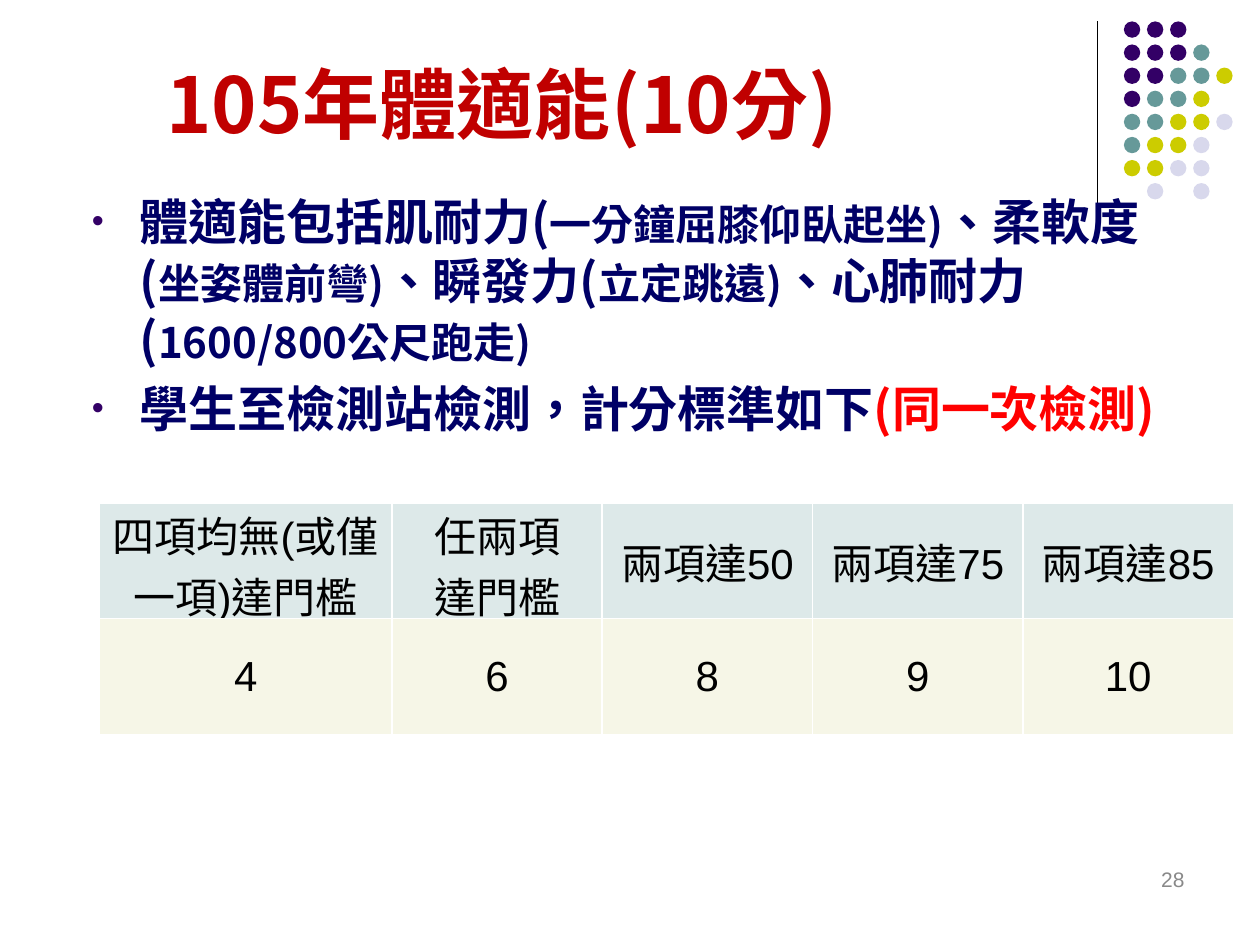
from lxml import etree
from pptx import Presentation
from pptx.dml.color import RGBColor
from pptx.enum.shapes import MSO_CONNECTOR, MSO_SHAPE
from pptx.enum.text import MSO_ANCHOR, PP_ALIGN
from pptx.oxml.ns import qn
from pptx.util import Inches, Pt

STRAIGHT = MSO_CONNECTOR.STRAIGHT
OVAL = MSO_SHAPE.OVAL
TOP, MIDDLE, BOTTOM = MSO_ANCHOR.TOP, MSO_ANCHOR.MIDDLE, MSO_ANCHOR.BOTTOM
LEFT, CENTER, RIGHT = PP_ALIGN.LEFT, PP_ALIGN.CENTER, PP_ALIGN.RIGHT
TITLE_ONLY = 5

PURPLE, NAVY, RED = "330066", "000066", "FF0000"
DOT_COLORS = {"P": PURPLE, "T": "669999", "Y": "CCCC00", "L": "D8D8EC"}
DOT_ROWS = ["PPP", "PPPT", "PPTTY", "PTTY", "TTYYL", "TYYL", "YYLL", " L L"]
DOT_PITCH = 0.55 / 3

CRITERIA = [
    [("體適能包括肌耐力(", 28, NAVY), ("一分鐘屈膝仰臥起坐)", 24, NAVY),
     ("、柔軟度(", 28, NAVY), ("坐姿體前彎)", 24, NAVY),
     ("、瞬發力(", 28, NAVY), ("立定跳遠)", 24, NAVY),
     ("、心肺耐力(", 28, NAVY), ("1600/800公尺跑走)", 24, NAVY)],
    [("學生至檢測站檢測，計分標準如下", 28, NAVY), ("(同一次檢測)", 28, RED)],
]
SCORES = [
    ["四項均無(或僅一項)達門檻", "任兩項\n達門檻", "兩項達50", "兩項達75", "兩項達85"],
    ["4", "6", "8", "9", "10"],
]
ROW_FILLS = ["DDE9E9", "F6F6E7"]


def color(hex_code):
    return RGBColor.from_string(hex_code)


class SlideWriter:
    """Holds the text style and the slide being filled."""
    title_font = "Noto Sans CJK JP"
    body_font = "Noto Sans CJK SC"
    plain_font = "Arial"
    language = "zh-TW"

    def __init__(self, slide):
        self.slide = slide
        self.shapes = slide.shapes

    def set_font(self, para, name, size, hex_code, bold=False, asian_name=None):
        """Set the paragraph font, for East Asian text too."""
        font = para.font
        font.name, font.size, font.bold = name, Pt(size), bold
        font.color.rgb = color(hex_code)
        properties = para._p.pPr.find(qn("a:defRPr"))
        properties.set("lang", self.language)
        etree.SubElement(properties, qn("a:ea"), typeface=asian_name or name)

    def title(self, text, left, top, width, height):
        box = self.shapes.title
        box.left, box.top = Inches(left), Inches(top)
        box.width, box.height = Inches(width), Inches(height)
        box.text_frame.text = text
        box.text_frame.vertical_anchor = BOTTOM
        para = box.text_frame.paragraphs[0]
        para.alignment = LEFT
        self.set_font(para, self.title_font, 44, "C00000", True)

    def text_frame(self, left, top, width, height):
        box = self.shapes.add_textbox(Inches(left), Inches(top), Inches(width), Inches(height))
        box.text_frame.word_wrap = True
        box.text_frame.vertical_anchor = TOP
        return box.text_frame

    def bullet(self, para):
        properties = para._p.get_or_add_pPr()
        properties.set("marL", str(Inches(0.38)))
        properties.set("indent", str(-Inches(0.38)))
        bullet_color = etree.SubElement(properties, qn("a:buClr"))
        etree.SubElement(bullet_color, qn("a:srgbClr"), val=PURPLE)
        etree.SubElement(properties, qn("a:buSzPct"), val="70000")
        etree.SubElement(properties, qn("a:buFont"), typeface=self.plain_font)
        etree.SubElement(properties, qn("a:buChar"), char="•")

    def bullet_list(self, items, left, top, width, height):
        frame = self.text_frame(left, top, width, height)
        for index, spans in enumerate(items):
            para = frame.add_paragraph() if index else frame.paragraphs[0]
            self.bullet(para)
            para.space_before = Pt(6 if index else 0)
            self.set_font(para, self.body_font, 28, NAVY, True)
            for text, size, hex_code in spans:
                span = para.add_run()
                span.text = text
                span.font.size = Pt(size)
                span.font.color.rgb = color(hex_code)

    def page_number(self, text, left, top, width, height):
        para = self.text_frame(left, top, width, height).paragraphs[0]
        para.text = text
        para.alignment = RIGHT
        self.set_font(para, self.plain_font, 12, "898989")

    def rule(self, x, top, bottom):
        line = self.shapes.add_connector(STRAIGHT, Inches(x), Inches(top), Inches(x), Inches(bottom))
        line.line.color.rgb = color("000000")
        line.line.width = Pt(0.75)
        etree.SubElement(line._element.spPr, qn("a:effectLst"))

    def dot_grid(self, left, top, size):
        group = self.shapes.add_group_shape()
        for row, marks in enumerate(DOT_ROWS):
            for column, mark in enumerate(marks):
                if mark == " ":
                    continue
                dot = group.shapes.add_shape(
                    OVAL, Inches(left + column * DOT_PITCH), Inches(top + row * DOT_PITCH),
                    Inches(size), Inches(size))
                dot.shadow.inherit = False
                dot.fill.solid()
                dot.fill.fore_color.rgb = color(DOT_COLORS[mark])
                dot.line.fill.background()

    def cell_borders(self, cell):
        properties = cell._tc.get_or_add_tcPr()
        for position, side in enumerate(("a:lnL", "a:lnR", "a:lnT", "a:lnB")):
            border = etree.Element(qn(side), w=str(Pt(1)))
            fill = etree.SubElement(border, qn("a:solidFill"))
            etree.SubElement(fill, qn("a:srgbClr"), val="FFFFFF")
            properties.insert(position, border)

    def cell(self, cell, text, fill):
        cell.fill.solid()
        cell.fill.fore_color.rgb = color(fill)
        cell.vertical_anchor = MIDDLE
        cell.margin_left = cell.margin_right = cell.margin_top = Inches(0.01)
        cell.margin_bottom = 0
        cell.text_frame.text = text
        for para in cell.text_frame.paragraphs:
            para.alignment = CENTER
            self.set_font(para, self.plain_font, 24, "000000", asian_name=self.title_font)
        self.cell_borders(cell)

    def table(self, rows, left, top, widths, row_height):
        table = self.shapes.add_table(
            len(rows), len(widths), Inches(left), Inches(top),
            Inches(sum(widths)), Inches(row_height * len(rows))).table
        for column, width in zip(table.columns, widths):
            column.width = Inches(width)
        for row, texts, fill in zip(table.rows, rows, ROW_FILLS):
            row.height = Inches(row_height)
            for cell, text in zip(row.cells, texts):
                self.cell(cell, text, fill)


def main():
    deck = Presentation()
    deck.slide_width, deck.slide_height = Inches(10), Inches(7.5)
    page = SlideWriter(deck.slides.add_slide(deck.slide_layouts[TITLE_ONLY]))
    page.rule(8.71, 0.17, 1.83)
    page.dot_grid(8.92, 0.17, 0.13)
    page.title("105年體適能(10分)", 1.22, 0.13, 7.53, 1.1)
    page.bullet_list(CRITERIA, 0.63, 1.47, 8.89, 5.26)
    page.page_number("28", 7.17, 6.83, 2.33, 0.5)
    page.table(SCORES, 0.79, 3.99, [2.32] + [1.67] * 4, 0.92)
    deck.save("out.pptx")


if __name__ == "__main__":
    main()
